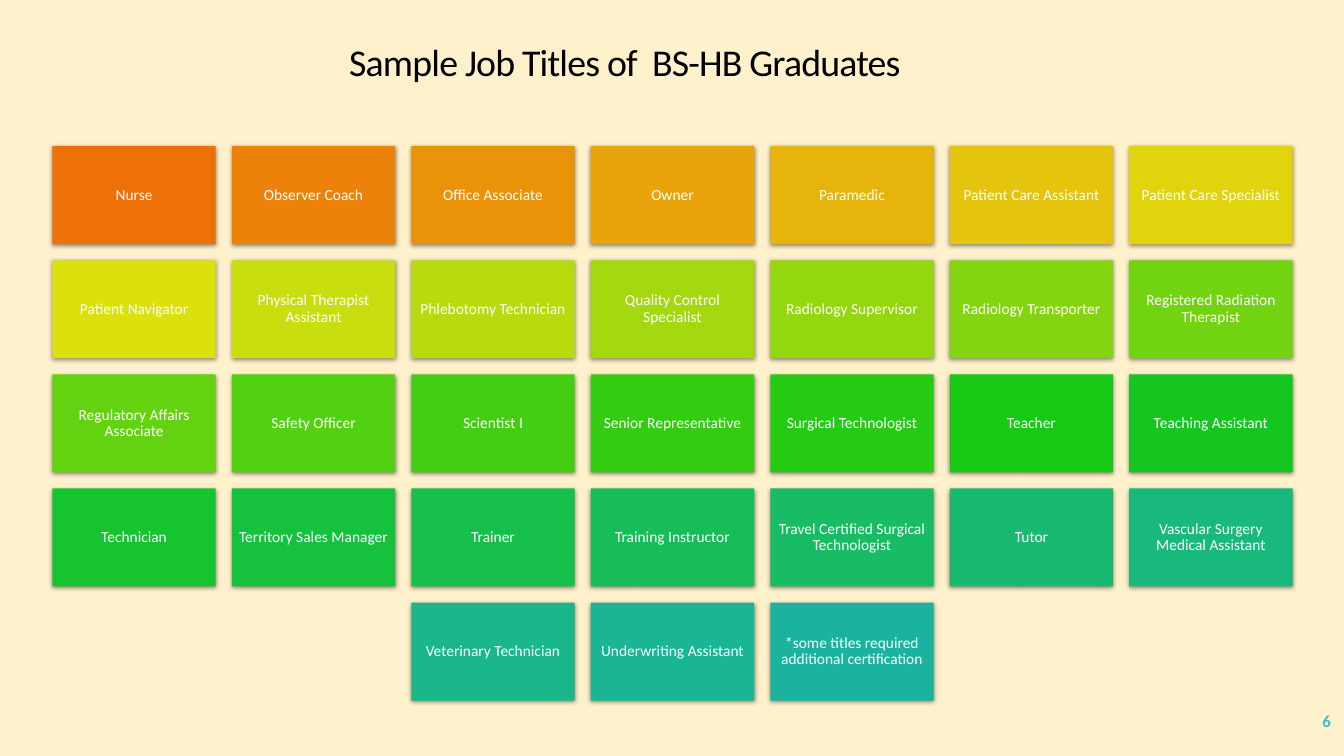
import colorsys

from lxml import etree
from pptx import Presentation
from pptx import util as u
from pptx.dml.color import RGBColor
from pptx.enum import shapes, text
from pptx.oxml import ns

COLORS = {
    "background": "FFF1CB",
    "title": "000000",
    "label": "FFFFFF",
    "number": "40BAD2",
    "first_tile": "EE7008",
    "last_tile": "1AB39F",
    "shadow": "000000",
}
FONT = "Calibri"
COLUMNS = 7
GAP = 0.16

JOB_TITLES = [
    "Nurse", "Observer Coach", "Office Associate", "Owner", "Paramedic",
    "Patient Care Assistant", "Patient Care Specialist",
    "Patient Navigator", "Physical Therapist Assistant", "Phlebotomy Technician",
    "Quality Control Specialist", "Radiology Supervisor",
    "Radiology Transporter", "Registered Radiation Therapist",
    "Regulatory Affairs Associate", "Safety Officer", "Scientist I",
    "Senior Representative", "Surgical Technologist", "Teacher",
    "Teaching Assistant",
    "Technician", "Territory Sales Manager", "Trainer", "Training Instructor",
    "Travel Certified Surgical Technologist", "Tutor",
    "Vascular Surgery Medical Assistant",
    "Veterinary Technician", "Underwriting Assistant",
    "*some titles required additional certification",
]


def place(shape, box):
    shape.left, shape.top, shape.width, shape.height = map(u.Inches, box)


def write(shape, words, size, color, align, bold=False):
    frame = shape.text_frame
    frame.word_wrap = True
    frame.auto_size = text.MSO_AUTO_SIZE.NONE
    frame.vertical_anchor = text.MSO_ANCHOR.MIDDLE
    paragraph = frame.paragraphs[0]
    paragraph.text = words
    paragraph.alignment = align
    paragraph.font.name = FONT
    paragraph.font.size = u.Pt(size)
    paragraph.font.bold = bold
    paragraph.font.color.rgb = RGBColor.from_string(COLORS[color])
    return paragraph


def blend_hues(count):
    first, last = (
        colorsys.rgb_to_hls(*(part / 255 for part in RGBColor.from_string(COLORS[name])))
        for name in ("first_tile", "last_tile")
    )
    for index in range(count):
        share = index / (count - 1)
        hls = (a + (b - a) * share for a, b in zip(first, last))
        yield RGBColor(*(round(part * 255) for part in colorsys.hls_to_rgb(*hls)))


def add_soft_shadow(shape):
    shape.shadow.inherit = False
    effects = shape.element.spPr.find(ns.qn("a:effectLst"))
    shadow = etree.SubElement(
        effects, ns.qn("a:outerShdw"), blurRad=str(u.Pt(3.5)),
        dist=str(u.Pt(1.1)), dir="5400000", algn="ctr", rotWithShape="0")
    color = etree.SubElement(shadow, ns.qn("a:srgbClr"), val=COLORS["shadow"])
    etree.SubElement(color, ns.qn("a:alpha"), val="45000")


def add_title(slide, box):
    title = slide.shapes.title
    place(title, box)
    paragraph = write(title, "Sample Job Titles of  BS-HB Graduates", 27, "title",
                      text.PP_ALIGN.CENTER)
    paragraph.line_spacing = 0.9
    for run in paragraph.runs:
        run._r.get_or_add_rPr().set("spc", "-60")


def add_tile(slide, box, words, color):
    tile = slide.shapes.add_shape(shapes.MSO_SHAPE.RECTANGLE, *map(u.Inches, box))
    tile.fill.solid()
    tile.fill.fore_color.rgb = color
    tile.line.fill.background()
    add_soft_shadow(tile)
    frame = tile.text_frame
    frame.margin_left = frame.margin_right = u.Inches(0.05)
    frame.margin_top = frame.margin_bottom = u.Inches(0.05)
    write(tile, words, 11, "label", text.PP_ALIGN.CENTER).line_spacing = 0.9


def add_job_grid(slide, box):
    left, top, width, height = box
    rows = [JOB_TITLES[start:start + COLUMNS]
            for start in range(0, len(JOB_TITLES), COLUMNS)]
    tile_width = (width - GAP * (COLUMNS - 1)) / COLUMNS
    tile_height = (height - GAP * (len(rows) - 1)) / len(rows)
    colors = blend_hues(len(JOB_TITLES))
    for row, titles in enumerate(rows):
        indent = (COLUMNS - len(titles)) / 2
        for column, words in enumerate(titles):
            x = left + (column + indent) * (tile_width + GAP)
            y = top + row * (tile_height + GAP)
            add_tile(slide, (x, y, tile_width, tile_height), words, next(colors))


def add_slide_number(slide, box):
    number = slide.shapes.add_textbox(*map(u.Inches, box))
    write(number, "6", 12, "number", text.PP_ALIGN.RIGHT, bold=True)


def main():
    presentation = Presentation()
    presentation.slide_width = u.Inches(13.33)
    presentation.slide_height = u.Inches(7.5)
    slide = presentation.slides.add_slide(presentation.slide_layouts.get_by_name("Title Only"))
    slide.background.fill.solid()
    slide.background.fill.fore_color.rgb = RGBColor.from_string(COLORS["background"])
    add_slide_number(slide, (11.63, 6.95, 1.67, 0.4))
    add_title(slide, (0, 0.4, 12.39, 0.47))
    add_job_grid(slide, (0.52, 1.45, 12.3, 5.5))
    presentation.save("out.pptx")


if __name__ == "__main__":
    main()
